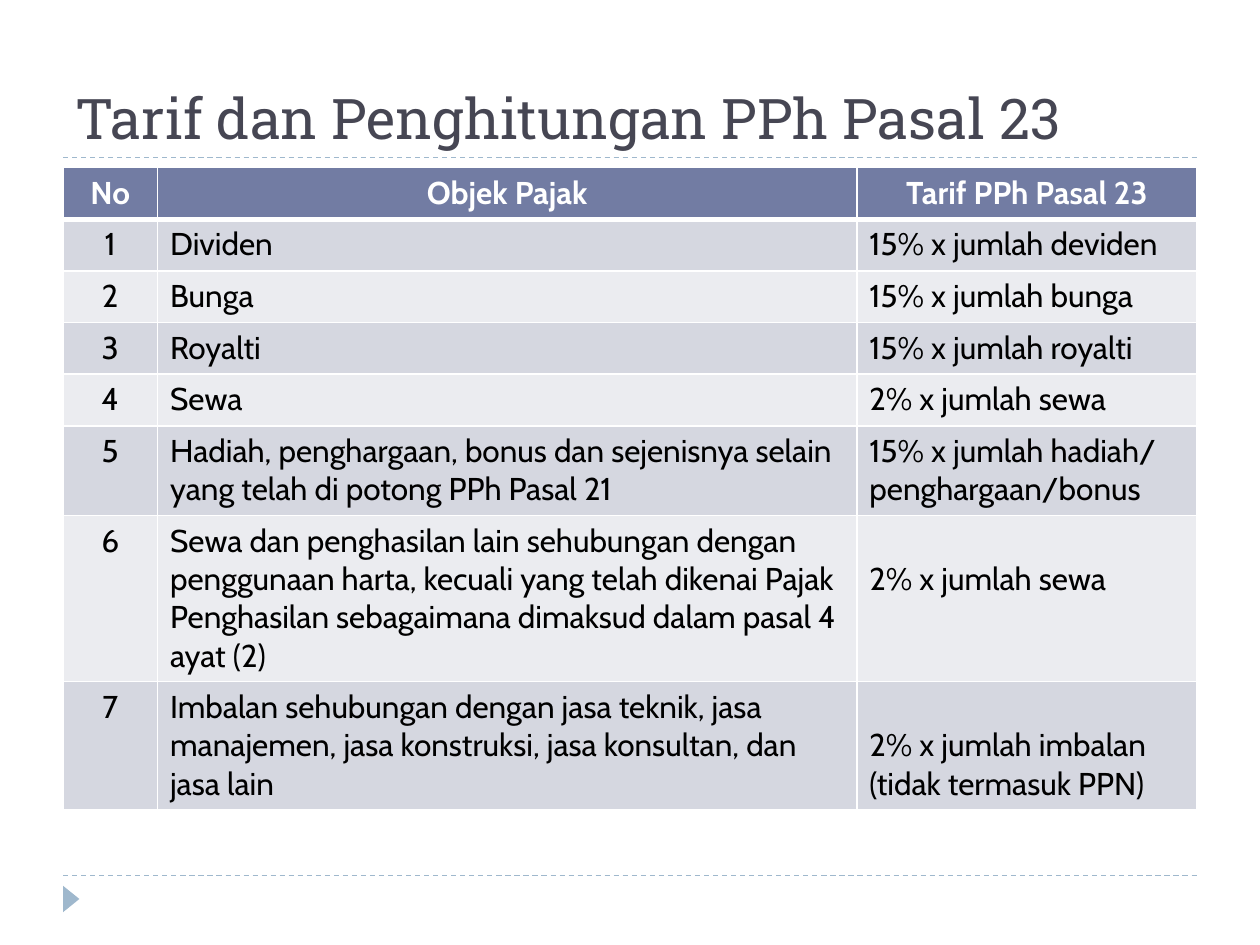
from typing import NamedTuple

from lxml.etree import SubElement
from pptx import Presentation
from pptx.dml.color import RGBColor
from pptx.enum.dml import MSO_LINE
from pptx.enum.shapes import MSO_CONNECTOR, MSO_SHAPE
from pptx.enum.text import MSO_ANCHOR, MSO_AUTO_SIZE, PP_ALIGN
from pptx.oxml.ns import qn
from pptx.util import Inches, Pt

COLORS = {
    "accent": "9FB8CD",
    "title": "464653",
    "header": "727CA3",
    "odd": "D5D7E0",
    "even": "EBECF0",
    "white": "FFFFFF",
    "black": "000000",
}
TITLE_FONT, BODY_FONT = "Roboto Slab", "Cabin"
LEFT, WIDTH = 0.5, 9
COLUMN_WIDTHS = (0.75, 5.55, 2.7)
ROW_HEIGHT = 0.41
CELL_MARGIN, LINE_PITCH = 0.05, 0.305


class TaxRow(NamedTuple):
    subject: str
    rate: str
    lines_above_rate: int = 0


HEADINGS = ("No", "Objek Pajak", "Tarif PPh Pasal 23")
TAX_ROWS = (
    TaxRow("Dividen", "15% x jumlah deviden"),
    TaxRow("Bunga", "15% x jumlah bunga"),
    TaxRow("Royalti", "15% x jumlah royalti"),
    TaxRow("Sewa", "2% x jumlah sewa"),
    TaxRow("Hadiah, penghargaan, bonus dan sejenisnya selain yang telah di potong PPh Pasal 21",
           "15% x jumlah hadiah/ penghargaan/bonus"),
    TaxRow("Sewa dan penghasilan lain sehubungan dengan penggunaan harta, kecuali yang telah "
           "dikenai Pajak Penghasilan sebagaimana dimaksud dalam pasal 4 ayat (2)",
           "2% x jumlah sewa", 1),
    TaxRow("Imbalan sehubungan dengan jasa teknik, jasa manajemen, jasa konstruksi, "
           "jasa konsultan, dan jasa lain",
           "2% x jumlah imbalan (tidak termasuk PPN)", 1),
)


def color(name: str) -> RGBColor:
    return RGBColor.from_string(COLORS[name])


def format_text(paragraph, font_name: str, size: int, color_name: str,
                alignment=PP_ALIGN.LEFT, bold: bool = False) -> None:
    paragraph.alignment = alignment
    for run in paragraph.runs:
        run.font.name = font_name
        run.font.size = Pt(size)
        run.font.bold = bold
        run.font.color.rgb = color(color_name)


def set_borders(cell, top: int = 1, bottom: int = 1) -> None:
    properties = cell._tc.get_or_add_tcPr()
    widths = {"a:lnL": 1, "a:lnR": 1, "a:lnT": top, "a:lnB": bottom}
    for position, (tag, width) in enumerate(widths.items()):
        line = SubElement(properties, qn(tag), w=str(Pt(width)))
        fill = SubElement(line, qn("a:solidFill"))
        SubElement(fill, qn("a:srgbClr"), val=COLORS["white"])
        properties.insert(position, line)


def fill_cell(cell, text: str, fill_name: str, color_name: str,
              alignment, bold: bool = False) -> None:
    cell.text_frame.text = text
    format_text(cell.text_frame.paragraphs[0], BODY_FONT, 18, color_name, alignment, bold)
    cell.fill.solid()
    cell.fill.fore_color.rgb = color(fill_name)


def add_dashed_rule(slide, top: float) -> None:
    rule = slide.shapes.add_connector(MSO_CONNECTOR.STRAIGHT, Inches(LEFT), Inches(top),
                                      Inches(LEFT + WIDTH), Inches(top))
    rule.line.color.rgb = color("accent")
    rule.line.width = Pt(0.75)
    rule.line.dash_style = MSO_LINE.DASH
    SubElement(rule._element.spPr, qn("a:effectLst"))


def add_corner_arrow(slide) -> None:
    arrow = slide.shapes.add_shape(MSO_SHAPE.ISOSCELES_TRIANGLE, Inches(0.46), Inches(7.07),
                                   Inches(0.21), Inches(0.13))
    arrow.rotation = 90
    arrow.shadow.inherit = False
    arrow.fill.solid()
    arrow.fill.fore_color.rgb = color("accent")
    arrow.line.fill.background()


def add_title(slide, text: str) -> None:
    title = slide.shapes.title
    title.left, title.top = Inches(LEFT), Inches(0.17)
    title.width, title.height = Inches(WIDTH), Inches(1.08)
    frame = title.text_frame
    frame.text = text
    frame.auto_size = MSO_AUTO_SIZE.NONE
    frame.vertical_anchor = MSO_ANCHOR.BOTTOM
    format_text(frame.paragraphs[0], TITLE_FONT, 32, "title")


def add_tax_table(slide) -> None:
    row_count = len(TAX_ROWS) + 1
    frame = slide.shapes.add_table(row_count, len(HEADINGS), Inches(LEFT), Inches(1.33),
                                   Inches(WIDTH), Inches(ROW_HEIGHT * row_count))
    table = frame.table
    for column, width in zip(table.columns, COLUMN_WIDTHS):
        column.width = Inches(width)
    for row in table.rows:
        row.height = Inches(ROW_HEIGHT)
    frame.height = Inches(5.03)

    # Header row
    for column, heading in enumerate(HEADINGS):
        cell = table.cell(0, column)
        fill_cell(cell, heading, "header", "white", PP_ALIGN.CENTER, bold=True)
        set_borders(cell, bottom=3)

    # Numbered rows in alternating bands
    for number, tax_row in enumerate(TAX_ROWS, start=1):
        band = "odd" if number % 2 else "even"
        for column, text in enumerate((str(number), tax_row.subject, tax_row.rate)):
            cell = table.cell(number, column)
            alignment = PP_ALIGN.LEFT if column else PP_ALIGN.CENTER
            fill_cell(cell, text, band, "black", alignment)
            set_borders(cell, top=3 if number == 1 else 1)
        table.cell(number, 2).margin_top = Inches(
            CELL_MARGIN + LINE_PITCH * tax_row.lines_above_rate)


def main() -> None:
    presentation = Presentation()
    presentation.slide_width, presentation.slide_height = Inches(10), Inches(7.5)
    slide = presentation.slides.add_slide(presentation.slide_layouts.get_by_name("Title Only"))

    # Frame of the page
    for top in (6.95, 1.25):
        add_dashed_rule(slide, top)
    add_corner_arrow(slide)

    # Content
    add_title(slide, "Tarif dan Penghitungan PPh Pasal 23")
    add_tax_table(slide)
    presentation.save("out.pptx")


if __name__ == "__main__":
    main()
